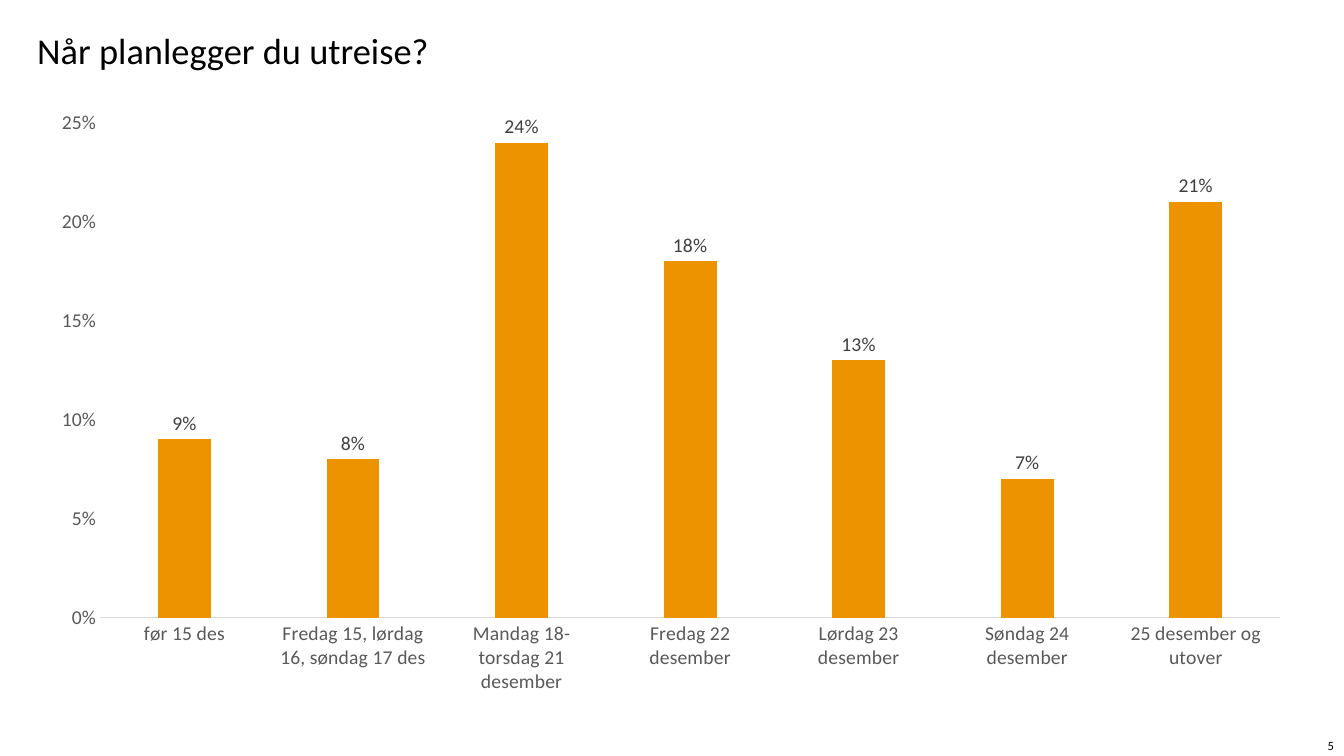
import pptx
import pptx.chart.data
import pptx.dml.color
import pptx.enum.chart
import pptx.enum.text
import pptx.util

Pt = pptx.util.Pt
RGBColor = pptx.dml.color.RGBColor

BLACK = RGBColor(0x00, 0x00, 0x00)
ORANGE = RGBColor(0xED, 0x93, 0x00)
AXIS_GREY = RGBColor(0x59, 0x59, 0x59)
LABEL_GREY = RGBColor(0x40, 0x40, 0x40)
LINE_GREY = RGBColor(0xD9, 0xD9, 0xD9)

DEPARTURES = {
    "før 15 des": 0.09,
    "Fredag 15, lørdag 16, søndag 17 des": 0.08,
    "Mandag 18- torsdag 21 desember": 0.24,
    "Fredag 22 desember": 0.18,
    "Lørdag 23 desember": 0.13,
    "Søndag 24 desember": 0.07,
    "25 desember og utover": 0.21,
}


class SlideBuilder:
    """Hold the text style and current slide, and add elements in points."""

    font_name = "Calibri"
    percent = "0%"

    def __init__(self, presentation):
        self.slide = presentation.slides.add_slide(presentation.slide_layouts[5])

    def style_font(self, font, size, color):
        font.name = self.font_name
        font.size = Pt(size)
        font.bold = False
        font.color.rgb = color

    def set_text(self, shape, text, size, alignment, anchor):
        frame = shape.text_frame
        frame.word_wrap = True
        frame.auto_size = pptx.enum.text.MSO_AUTO_SIZE.NONE
        frame.vertical_anchor = anchor
        paragraph = frame.paragraphs[0]
        paragraph.text = text
        paragraph.alignment = alignment
        self.style_font(paragraph.font, size, BLACK)

    def title(self, text, left, top, width, height):
        shape = self.slide.shapes.title
        shape.left, shape.top = Pt(left), Pt(top)
        shape.width, shape.height = Pt(width), Pt(height)
        frame = shape.text_frame
        frame.margin_left = frame.margin_right = 0
        frame.margin_top = frame.margin_bottom = 0
        self.set_text(shape, text, 26, pptx.enum.text.PP_ALIGN.LEFT,
                      pptx.enum.text.MSO_ANCHOR.TOP)

    def page_number(self, text, left, top, width, height):
        shape = self.slide.shapes.add_textbox(Pt(left), Pt(top), Pt(width), Pt(height))
        self.set_text(shape, text, 9, pptx.enum.text.PP_ALIGN.RIGHT,
                      pptx.enum.text.MSO_ANCHOR.MIDDLE)

    def column_chart(self, values, left, top, width, height):
        data = pptx.chart.data.CategoryChartData(number_format=self.percent)
        data.categories = values.keys()
        data.add_series("Series 1", values.values())
        chart = self.slide.shapes.add_chart(
            pptx.enum.chart.XL_CHART_TYPE.COLUMN_CLUSTERED,
            Pt(left), Pt(top), Pt(width), Pt(height), data).chart
        chart.has_title = False
        chart.has_legend = False
        self.style_font(chart.font, 14, BLACK)

        for axis in (chart.category_axis, chart.value_axis):
            axis.has_major_gridlines = False
            axis.major_tick_mark = pptx.enum.chart.XL_TICK_MARK.NONE
            axis.minor_tick_mark = pptx.enum.chart.XL_TICK_MARK.NONE
            self.style_font(axis.tick_labels.font, 14, AXIS_GREY)
        chart.category_axis.format.line.color.rgb = LINE_GREY
        chart.category_axis.format.line.width = Pt(0.75)
        value_axis = chart.value_axis
        value_axis.format.line.fill.background()
        value_axis.minimum_scale, value_axis.maximum_scale = 0, 0.25
        value_axis.major_unit = 0.05
        value_axis.tick_labels.number_format = self.percent
        value_axis.tick_labels.number_format_is_linked = False

        plot = chart.plots[0]
        plot.gap_width = 219
        plot.overlap = -27
        plot.vary_by_categories = False
        series = plot.series[0]
        series.invert_if_negative = False
        series.format.fill.solid()
        series.format.fill.fore_color.rgb = ORANGE
        labels = series.data_labels
        labels.show_value = True
        labels.number_format = self.percent
        labels.number_format_is_linked = False
        labels.position = pptx.enum.chart.XL_LABEL_POSITION.OUTSIDE_END
        self.style_font(labels.font, 14, LABEL_GREY)


def main():
    presentation = pptx.Presentation()
    presentation.slide_width, presentation.slide_height = Pt(960), Pt(540)
    builder = SlideBuilder(presentation)
    builder.page_number("5", 932.5, 525, 27.5, 15)
    builder.title("Når planlegger du utreise?", 26.6, 20.2, 834, 36.7)
    builder.column_chart(DEPARTURES, 26, 70.5, 906.5, 434)
    presentation.save("out.pptx")


if __name__ == "__main__":
    main()
